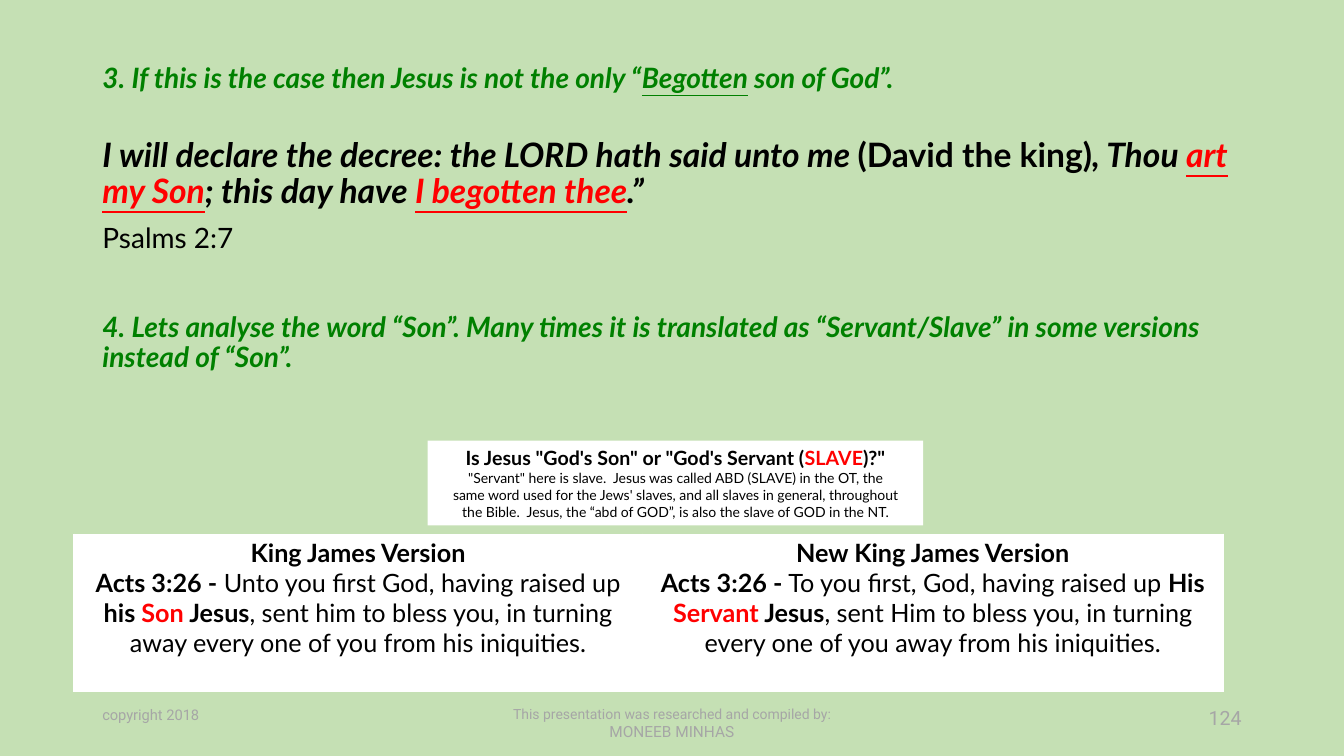
from pptx import Presentation
from pptx.dml.color import RGBColor
from pptx.enum.shapes import MSO_SHAPE
from pptx.enum.text import MSO_ANCHOR, MSO_AUTO_SIZE, PP_ALIGN
from pptx.oxml.ns import qn
from pptx.util import Pt

BACKGROUND = RGBColor(0xC5, 0xE0, 0xB4)
GREEN = RGBColor(0x00, 0x80, 0x00)
BLACK = RGBColor(0x00, 0x00, 0x00)
RED = RGBColor(0xFF, 0x00, 0x00)
GRAY = RGBColor(0xA6, 0xA6, 0xA6)
WHITE = RGBColor(0xFF, 0xFF, 0xFF)

HEADING = {"name": "Lato", "size": Pt(20), "bold": True, "italic": True, "color": GREEN}
VERSE = {**HEADING, "size": Pt(24), "color": BLACK}
PLAIN = {"name": "Lato", "size": Pt(20), "bold": False, "italic": False, "color": BLACK}
CELL = {**PLAIN, "size": Pt(18)}
FOOTER = {"name": "Roboto", "color": GRAY}

BOLD = {"bold": True}
UPRIGHT = {"italic": False}
UNDERLINED = {"underline": True}
RED_BOLD = {"bold": True, "color": RED}
RED_UNDERLINED = {"underline": True, "color": RED}

LEFT_TEXT = {"alignment": PP_ALIGN.LEFT, "line_spacing": 0.9, "space_before": Pt(10)}
CENTERED = {"alignment": PP_ALIGN.CENTER}


def set_values(target, values):
    for name, value in values.items():
        if name == "color":
            target.color.rgb = value
        else:
            setattr(target, name, value)


def write_paragraph(paragraph, runs, font, layout):
    set_values(paragraph, layout)
    for text, changes in runs:
        for number, line in enumerate(text.split("\n")):
            if number:
                paragraph.add_line_break()
            run = paragraph.add_run()
            run.text = line
            set_values(run.font, {**font, **changes})


def write_paragraphs(frame, paragraphs):
    for number, (runs, font, layout) in enumerate(paragraphs):
        paragraph = frame.add_paragraph() if number else frame.paragraphs[0]
        write_paragraph(paragraph, runs, font, layout)


def place(shape, box):
    set_values(shape, dict(zip(("left", "top", "width", "height"), map(Pt, box))))


def fill_title(slide, box):
    title = slide.shapes.title
    place(title, box)
    set_values(title.text_frame, {
        "auto_size": MSO_AUTO_SIZE.NONE, "vertical_anchor": MSO_ANCHOR.TOP, "margin_top": Pt(17),
    })
    runs = [
        ("3. If this is the case then Jesus is not the only “", {}),
        ("Begotten", UNDERLINED),
        (" son of God”.", {}),
    ]
    write_paragraphs(title.text_frame, [(runs, HEADING, {**LEFT_TEXT, "space_before": Pt(0)})])


def fill_body(slide, box):
    body = slide.placeholders[1]
    place(body, box)
    body.text_frame.auto_size = MSO_AUTO_SIZE.NONE
    verse = [
        ("I will declare the decree: the LORD hath said unto me ", {}),
        ("(David the king)", UPRIGHT),
        (", Thou ", {}),
        ("art my Son", RED_UNDERLINED),
        ("; this day have ", {}),
        ("I begotten thee", RED_UNDERLINED),
        (".”", {}),
    ]
    question = (
        "4. Lets analyse the word “Son”. Many times it is translated as "
        "“Servant/Slave” in some versions instead of “Son”."
    )
    write_paragraphs(body.text_frame, [
        (verse, VERSE, LEFT_TEXT),
        ([("Psalms 2:7", {})], PLAIN, LEFT_TEXT),
        ([(question, {})], HEADING, {**LEFT_TEXT, "space_before": Pt(41.6)}),
    ])
    for paragraph in body.text_frame.paragraphs:
        properties = paragraph._p.get_or_add_pPr()
        properties.set("marL", "0")
        properties.set("indent", "0")
        properties.append(properties.makeelement(qn("a:buNone"), {}))


def add_versions(slide, box):
    versions = [
        [
            ("King James Version\nActs 3:26 -", BOLD),
            (" Unto you first God, having raised up ", {}),
            ("his ", BOLD),
            ("Son", RED_BOLD),
            (" Jesus", BOLD),
            (", sent him to bless you, in turning away every one of you from his iniquities.", {}),
        ],
        [
            ("New King James Version\nActs 3:26 -", BOLD),
            (" To you first, God, having raised up ", {}),
            ("His ", BOLD),
            ("Servant", RED_BOLD),
            (" Jesus", BOLD),
            (", sent Him to bless you, in turning every one of you away from his iniquities.", {}),
        ],
    ]
    table = slide.shapes.add_table(1, len(versions), *map(Pt, box)).table
    set_values(table, {"first_row": False, "horz_banding": False})
    margins = ("margin_left", "margin_top", "margin_right", "margin_bottom")
    for column, width, cell, runs in zip(table.columns, (406, 415), table.rows[0].cells, versions):
        column.width = Pt(width)
        set_values(cell, dict.fromkeys(margins, Pt(2.2)))
        cell.fill.solid()
        cell.fill.fore_color.rgb = WHITE
        write_paragraphs(cell.text_frame, [(runs, CELL, CENTERED)])


def add_note(slide, box):
    note = slide.shapes.add_shape(MSO_SHAPE.RECTANGLE, *map(Pt, box))
    note.shadow.inherit = False
    note.fill.solid()
    note.fill.fore_color.rgb = WHITE
    note.line.fill.background()
    set_values(note.text_frame, {"word_wrap": False, "vertical_anchor": MSO_ANCHOR.MIDDLE})
    heading = [
        ("Is Jesus \"God's Son\" or \"God's Servant (", BOLD),
        ("SLAVE", RED_BOLD),
        (")?\"", BOLD),
    ]
    explanation = (
        "\"Servant\" here is slave.  Jesus was called ABD (SLAVE) in the OT, the\n"
        "same word used for the Jews' slaves, and all slaves in general, throughout\n"
        "the Bible.  Jesus, the “abd of GOD”, is also the slave of GOD in the NT."
    )
    write_paragraphs(note.text_frame, [
        (heading, {**PLAIN, "size": Pt(14)}, CENTERED),
        ([(explanation, {})], {**PLAIN, "size": Pt(10)}, CENTERED),
    ])


def add_footer(slide, box, alignment, lines):
    footer = slide.shapes.add_textbox(*map(Pt, box))
    footer.text_frame.word_wrap = True
    write_paragraphs(footer.text_frame, [
        ([(text, {"size": Pt(size)})], FOOTER, {"alignment": alignment}) for text, size in lines
    ])


def build_slide(presentation):
    slide = presentation.slides.add_slide(presentation.slide_layouts[1])
    slide.background.fill.solid()
    slide.background.fill.fore_color.rgb = BACKGROUND
    fill_title(slide, (66, 28.8, 828, 77))
    fill_body(slide, (66, 95, 828, 343))
    add_versions(slide, (52.8, 381.6, 821, 112.5))
    add_note(slide, (305.5, 314.8, 354, 60.5))
    add_footer(slide, (678, 500.5, 216, 29), PP_ALIGN.RIGHT, [("124", 14)])
    add_footer(slide, (318, 500.5, 324, 29), PP_ALIGN.CENTER, [
        ("This presentation was researched and compiled by:", 10), ("MONEEB MINHAS", 11),
    ])
    add_footer(slide, (66, 500.5, 216, 29), PP_ALIGN.LEFT, [("copyright 2018", 10.5)])


def main():
    presentation = Presentation()
    set_values(presentation, {"slide_width": Pt(960), "slide_height": Pt(540)})
    build_slide(presentation)
    presentation.save("out.pptx")


if __name__ == "__main__":
    main()
